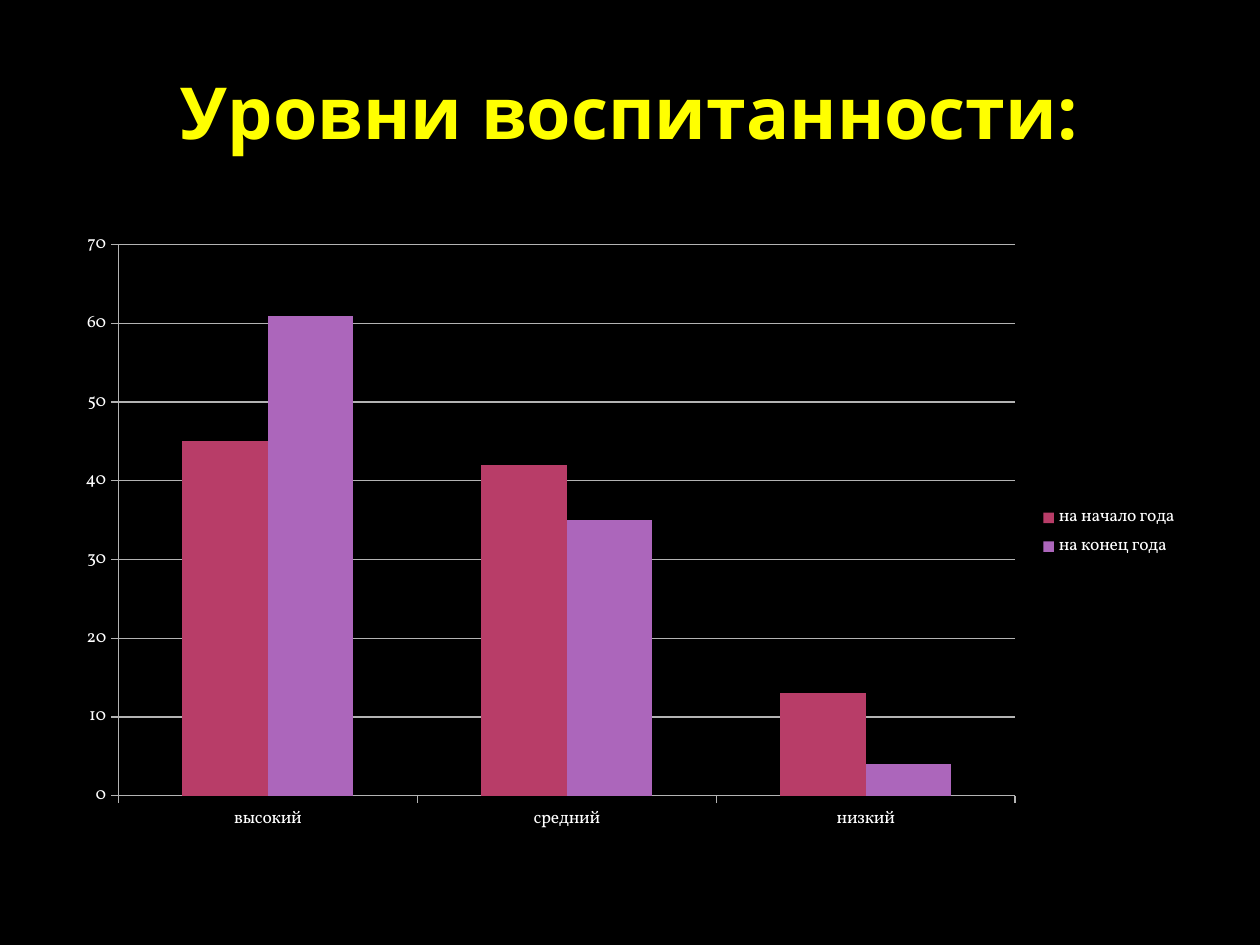
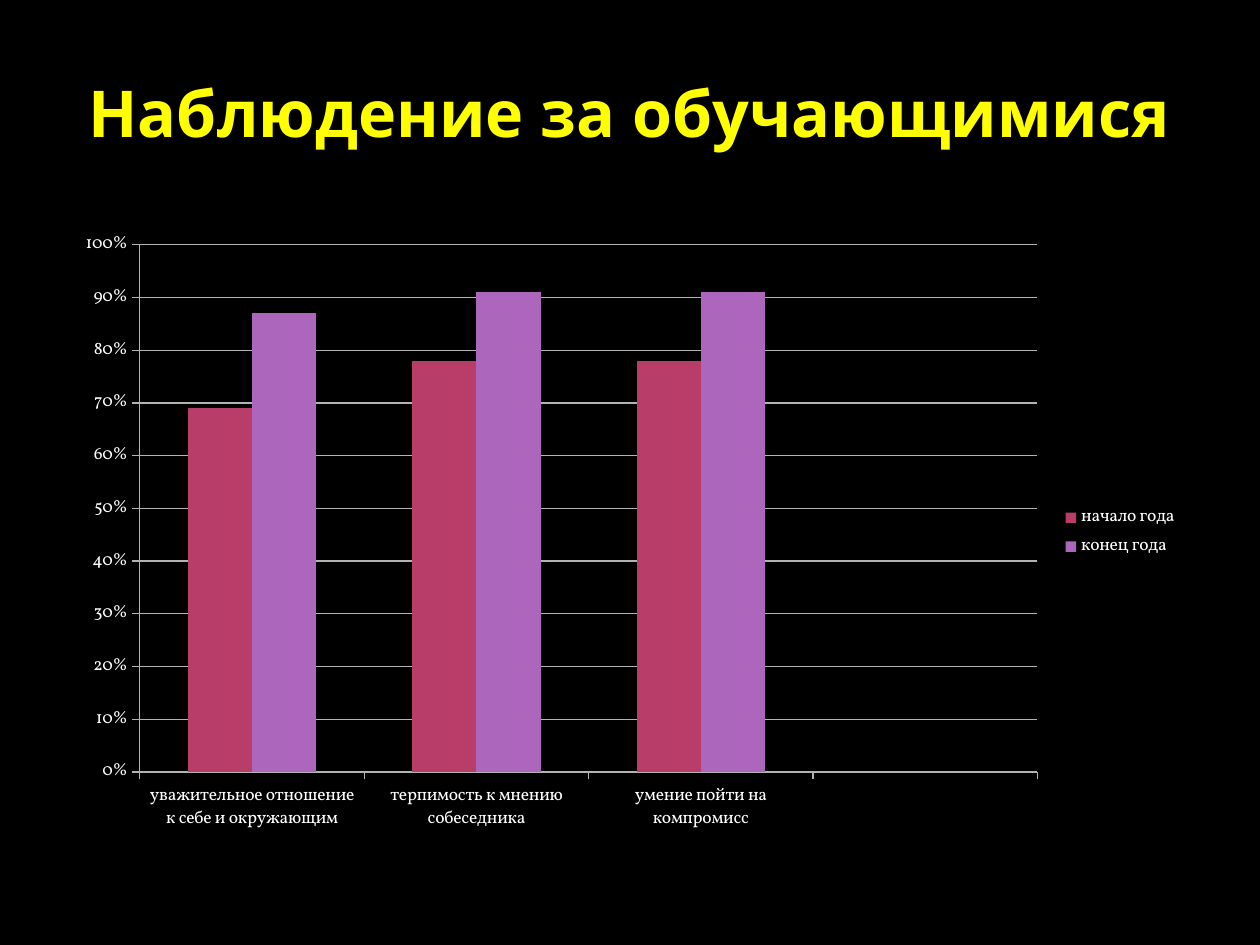
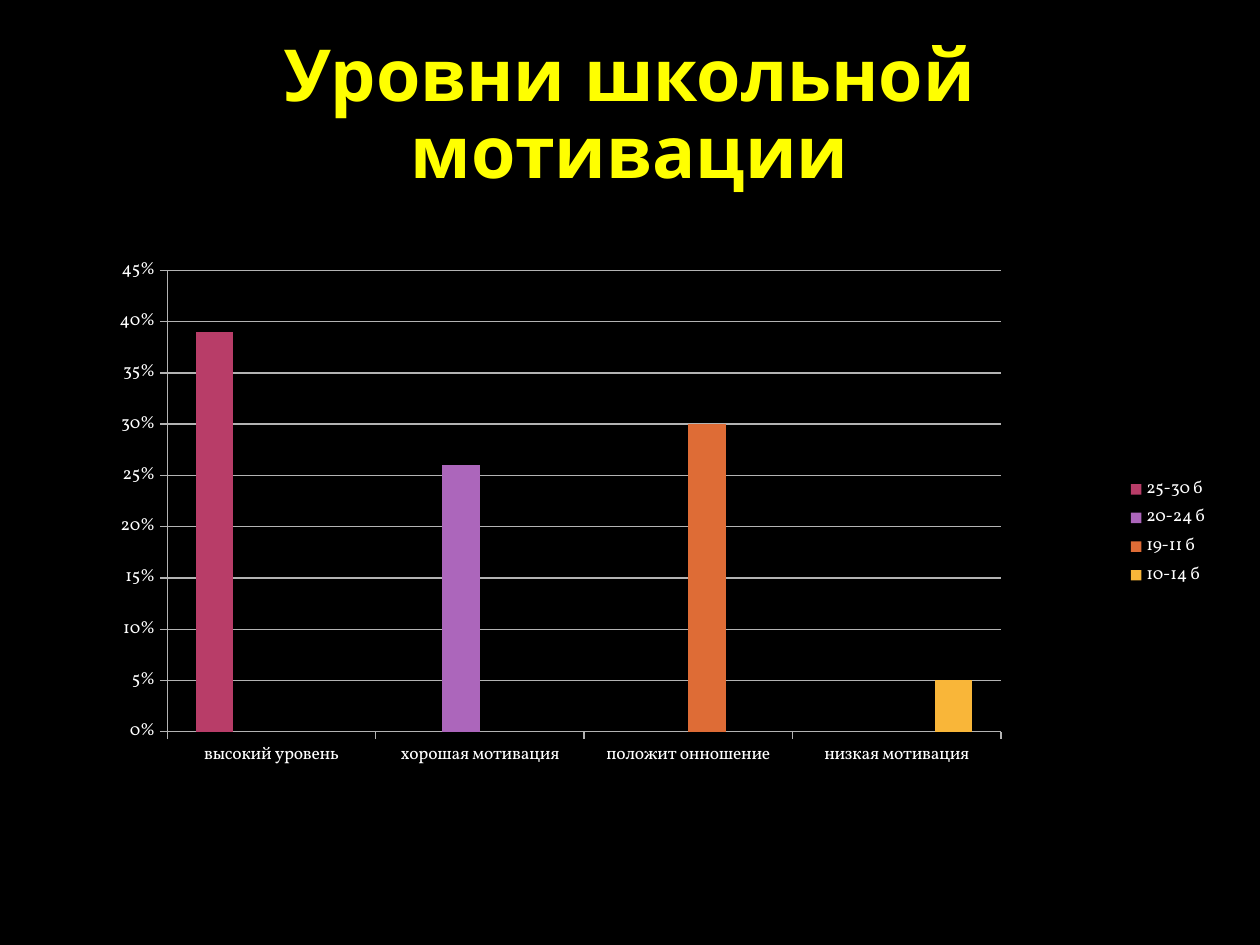
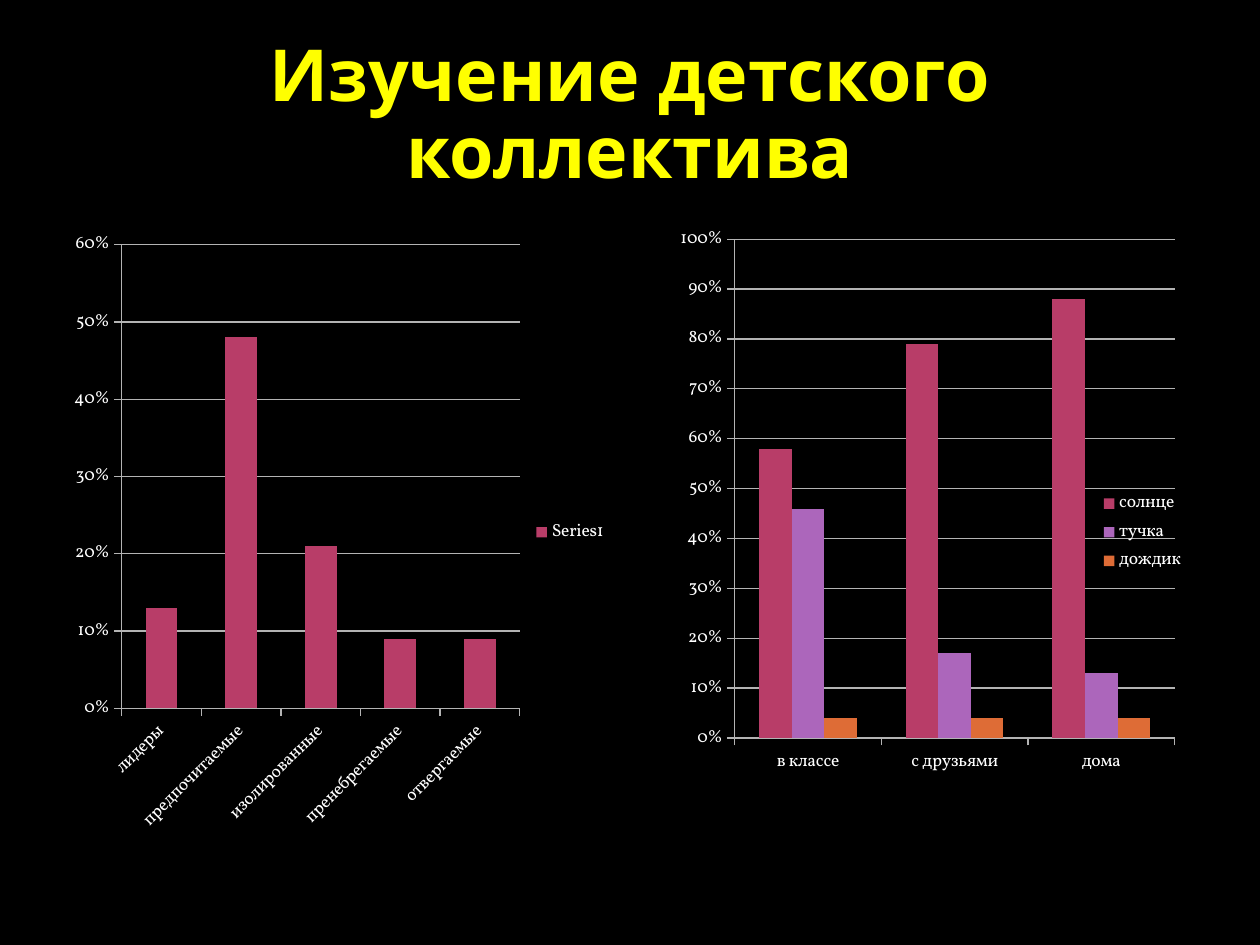
from pptx import Presentation
from pptx.chart.data import CategoryChartData as ChartData
from pptx.dml.color import RGBColor
from pptx.enum.chart import XL_CHART_TYPE as Kind
from pptx.enum.chart import XL_LEGEND_POSITION as Side
from pptx.enum.chart import XL_TICK_MARK as Tick
from pptx.enum.text import MSO_ANCHOR as Anchor, PP_ALIGN as Align
from pptx.oxml import parse_xml
from pptx.oxml.ns import nsdecls, qn
from pptx.util import Inches, Pt

# Shared look
BACK, INK, TITLE, GRID = "000000", "FFFFFF", "FFFF00", "B3B3B3"
BARS = ["B83D68", "AC66BB", "DE6C36", "F9B639"]
HEAD, BODY = "Open Sans", "Vollkorn"
LEFT, TOP, HIGH = 0.5, 1.75, 4.95
HALF, RIGHT = 4.42, 5.08


def color(code):
    return RGBColor.from_string(code)


def style(font, name, size, code, bold=False):
    font.name, font.size, font.bold = name, Pt(size), bold
    font.color.rgb = color(code)


def add_page(prs, title, size=41):
    """Black slide with a centred yellow title."""
    page = prs.slides.add_slide(prs.slide_layouts[6])
    page.background.fill.solid()
    page.background.fill.fore_color.rgb = color(BACK)
    box = page.shapes.add_textbox(Inches(LEFT), Inches(0.3),
                                  Inches(9), Inches(1.25))
    frame = box.text_frame
    frame.word_wrap = True
    frame.vertical_anchor = Anchor.MIDDLE
    para = frame.paragraphs[0]
    para.alignment = Align.CENTER
    para.line_spacing = 0.9
    run = para.add_run()
    run.text = title
    style(run.font, HEAD, size, TITLE, True)
    return page


def draw_line(line):
    line.color.rgb = color(GRID)
    line.width = Pt(0.75)


def set_axes(chart, top, step):
    for axis in (chart.category_axis, chart.value_axis):
        axis.major_tick_mark = Tick.OUTSIDE
        axis.minor_tick_mark = Tick.NONE
        draw_line(axis.format.line)
    axis = chart.value_axis
    axis.minimum_scale, axis.maximum_scale = 0, top
    axis.major_unit = step
    axis.has_major_gridlines = True
    draw_line(axis.major_gridlines.format.line)


def place_plot(chart, area):
    """Fix the inner plot area as shares of the chart: x, y, w, h."""
    plot = chart._chartSpace.chart.plotArea
    for old in plot.findall(qn("c:layout")):
        plot.remove(old)
    sizes = "".join(f'<c:{tag} val="{val}"/>' for tag, val in zip("xywh", area))
    plot.insert(0, parse_xml(
        f'<c:layout {nsdecls("c")}><c:manualLayout>'
        '<c:layoutTarget val="inner"/><c:xMode val="edge"/>'
        f'<c:yMode val="edge"/>{sizes}</c:manualLayout></c:layout>'))


def add_bars(page, left, wide, cats, rows, top, step,
             form="0%", kind=Kind.COLUMN_CLUSTERED, area=None):
    """Column chart; rows are (name, values) pairs."""
    data = ChartData(number_format=form)
    data.categories = cats
    for name, vals in rows:
        data.add_series(name, vals)
    chart = page.shapes.add_chart(kind, Inches(left), Inches(TOP),
                                  Inches(wide), Inches(HIGH), data).chart
    chart.has_title = False
    style(chart.font, BODY, 10, INK)
    chart.has_legend = True
    chart.legend.position = Side.RIGHT
    chart.legend.include_in_layout = False
    set_axes(chart, top, step)
    chart.value_axis.tick_labels.number_format = form
    chart.value_axis.tick_labels.number_format_is_linked = False
    plot = chart.plots[0]
    plot.gap_width = 150
    plot.overlap = 100 if kind == Kind.COLUMN_STACKED else 0
    plot.vary_by_categories = False
    for bar, code in zip(plot.series, BARS):
        bar.format.fill.solid()
        bar.format.fill.fore_color.rgb = color(code)
        # An unnamed series takes the default legend label
        if not bar.name:
            bar._element.remove(bar._element.find(qn("c:tx")))
    if area:
        place_plot(chart, area)


def main():
    prs = Presentation()
    prs.slide_width, prs.slide_height = Inches(10), Inches(7.5)

    # Levels of upbringing
    page = add_page(prs, "Уровни воспитанности:")
    add_bars(page, LEFT, 8.95, ["высокий", "средний", "низкий"],
             [("на начало года", [45, 42, 13]),
              ("на конец года", [61, 35, 4])], 70, 10, "General")

    # Observation, with one empty place at the end
    page = add_page(prs, "Наблюдение за обучающимися", 36.9)
    add_bars(page, LEFT, 8.95,
             ["уважительное отношение к себе и окружающим",
              "терпимость к мнению собеседника",
              "умение пойти на компромисс", ""],
             [("начало года", [0.69, 0.78, 0.78, None]),
              ("конец года", [0.87, 0.91, 0.91, None])], 1, 0.1)

    # School motivation: each series fills its own category
    page = add_page(prs, "Уровни школьной мотивации")
    marks = [("25-30 б", 0.39), ("20-24 б", 0.26),
             ("19-11 б", 0.3), ("10-14 б", 0.05)]
    rows = [(name, [val if col == row else None for col in range(len(marks))])
            for row, (name, val) in enumerate(marks)]
    add_bars(page, LEFT, 9.19,
             ["высокий уровень", "хорошая мотивация",
              "положит онношение", "низкая мотивация"],
             rows, 0.45, 0.05, area=(0.09, 0.08, 0.72, 0.74))

    # Study of the group
    page = add_page(prs, "Изучение детского коллектива")
    add_bars(page, LEFT, HALF,
             ["лидеры", "предпочитаемые", "изолированные",
              "пренебрегаемые", "отвергаемые"],
             [("", [0.13, 0.48, 0.21, 0.09, 0.09])], 0.6, 0.1,
             kind=Kind.COLUMN_STACKED)
    add_bars(page, RIGHT, HALF, ["в классе", "с друзьями", "дома"],
             [("солнце", [0.58, 0.79, 0.88]),
              ("тучка", [0.46, 0.17, 0.13]),
              ("дождик", [0.04, 0.04, 0.04])], 1, 0.1,
             area=(0.17, 0.03, 0.79, 0.8))

    prs.save("out.pptx")


if __name__ == "__main__":
    main()
